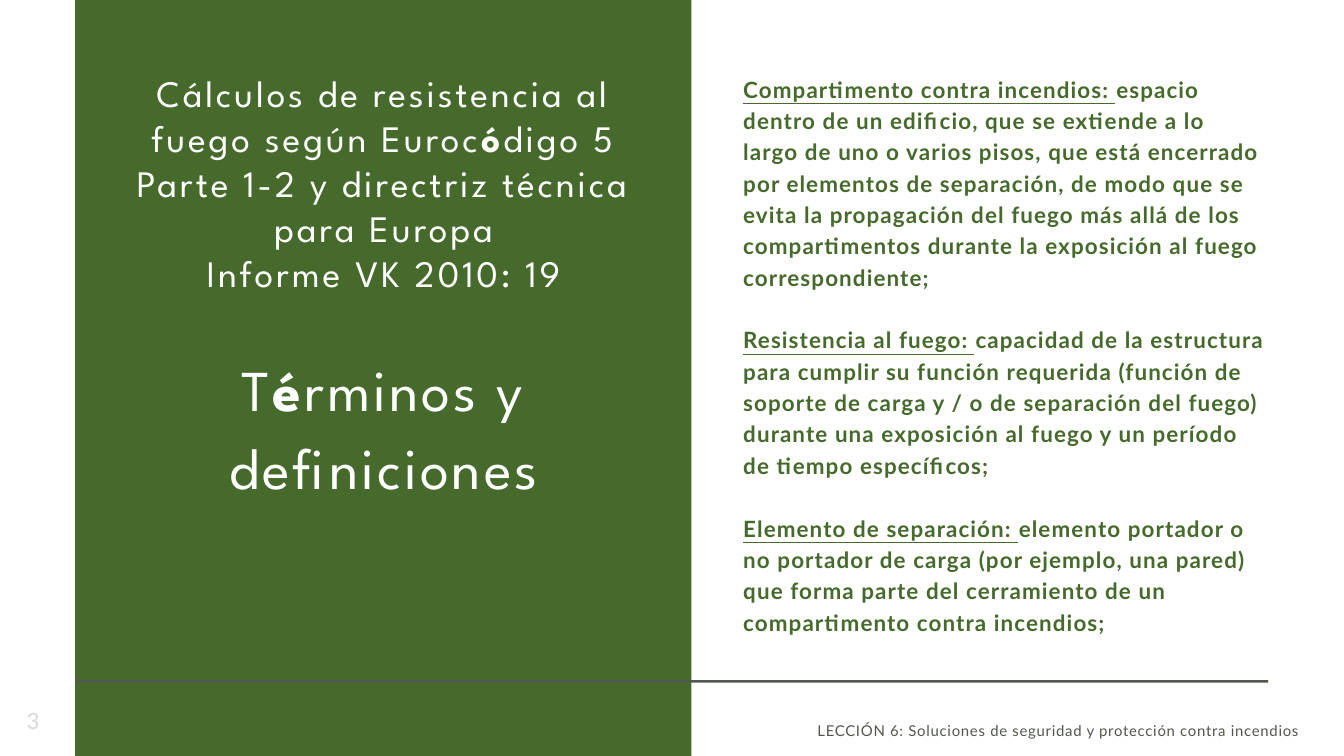
import pptx
import pptx.util
import pptx.dml.color
import pptx.enum.shapes
import pptx.enum.text

Inches = pptx.util.Inches
Pt = pptx.util.Pt
Align = pptx.enum.text.PP_ALIGN

GREEN, GRAY, PALE, WHITE = "456A2C", "52584D", "D9D9D9", "FFFFFF"

DEFINITIONS = [
    ("Compartimento contra incendios: ",
     "espacio dentro de un edificio, que se extiende a lo largo de uno o varios pisos, "
     "que está encerrado por elementos de separación, de modo que se evita la propagación "
     "del fuego más allá de los compartimentos durante la exposición al fuego correspondiente;"),
    ("Resistencia al fuego: ",
     "capacidad de la estructura para cumplir su función requerida (función de soporte de "
     "carga y / o de separación del fuego) durante una exposición al fuego y un período de "
     "tiempo específicos;"),
    ("Elemento de separación: ",
     "elemento portador o no portador de carga (por ejemplo, una pared) que forma parte del "
     "cerramiento de un compartimento contra incendios;"),
]

HEADING = [
    {"size": 40, "runs": [("Cálculos de resistencia al fuego según Euroc", False), ("ó", True),
                          ("digo 5 Parte 1-2 y directriz técnica para Europa", False)]},
    {"size": 40, "runs": [("Informe VK 2010: 19", False)]},
    {"size": 62, "runs": [("T", False), ("é", True), ("rminos y definiciones", False)],
     "line": 83.7, "before": 54},
]

PAGE_NUMBER = "3"
FOOTER = "LECCIÓN 6: Soluciones de seguridad y protección contra incendios"

PANEL = (1.12, -0.37, 9.17, 11.98)
RULE = (1.12, 10.12, 17.75, 0.04)


def color(hex_code):
    return pptx.dml.color.RGBColor.from_string(hex_code)


def add_block(slide, box, fill):
    block = slide.shapes.add_shape(pptx.enum.shapes.MSO_SHAPE.RECTANGLE, *map(Inches, box))
    block.shadow.inherit = False
    block.fill.solid()
    block.fill.fore_color.rgb = color(fill)
    block.line.fill.background()


def add_frame(slide, box, grow=True):
    frame = slide.shapes.add_textbox(*map(Inches, box)).text_frame
    frame.word_wrap = True
    if grow:
        frame.margin_left = frame.margin_top = frame.margin_right = frame.margin_bottom = 0
        frame.auto_size = pptx.enum.text.MSO_AUTO_SIZE.SHAPE_TO_FIT_TEXT
    return frame


def add_paragraph(frame, size, font, hex_code, align=Align.LEFT, line=None, before=None):
    first = frame.paragraphs[0]
    paragraph = frame.add_paragraph() if first.runs else first
    paragraph.alignment = align
    paragraph.font.size = Pt(size)
    paragraph.font.name = font
    paragraph.font.color.rgb = color(hex_code)
    if line:
        paragraph.line_spacing = Pt(line)
    if before:
        paragraph.space_before = Pt(before)
    return paragraph


def add_run(paragraph, text, tracking):
    run = paragraph.add_run()
    run.text = text
    run.font._element.set("spc", str(round(tracking * 100)))
    return run


def main():
    deck = pptx.Presentation()
    deck.slide_width, deck.slide_height = Inches(20), Inches(11.25)
    slide = deck.slides.add_slide(deck.slide_layouts[6])

    definitions = add_frame(slide, (11.06, 1.06, 7.78, 8.55))
    for index, (term, meaning) in enumerate(DEFINITIONS):
        paragraph = add_paragraph(definitions, 24, "Lato", GREEN, line=33.6,
                                  before=33.6 if index else None)
        paragraph.font.bold = True
        add_run(paragraph, term, 1.2).font.underline = True
        add_run(paragraph, meaning, 1.2)

    add_block(slide, PANEL, GREEN)
    add_block(slide, RULE, GRAY)

    heading = add_frame(slide, (1.93, 1.05, 7.56, 7.12))
    for part in HEADING:
        paragraph = add_paragraph(heading, part["size"], "League Spartan", WHITE, Align.CENTER,
                                  part.get("line"), part.get("before"))
        for text, bold in part["runs"]:
            add_run(paragraph, text, 3.1).font.bold = bold

    page_number = add_frame(slide, (0.3, 10.52, 2.33, 0.4), grow=False)
    page_number.vertical_anchor = pptx.enum.text.MSO_ANCHOR.MIDDLE
    add_run(add_paragraph(page_number, 24, "Lato", PALE), PAGE_NUMBER, 1.2)

    footer = add_frame(slide, (11.33, 10.7, 8.01, 0.29))
    add_run(add_paragraph(footer, 16, "Lato", GRAY, Align.RIGHT, 22.4), FOOTER, 0.8)

    deck.save("out.pptx")


if __name__ == "__main__":
    main()
